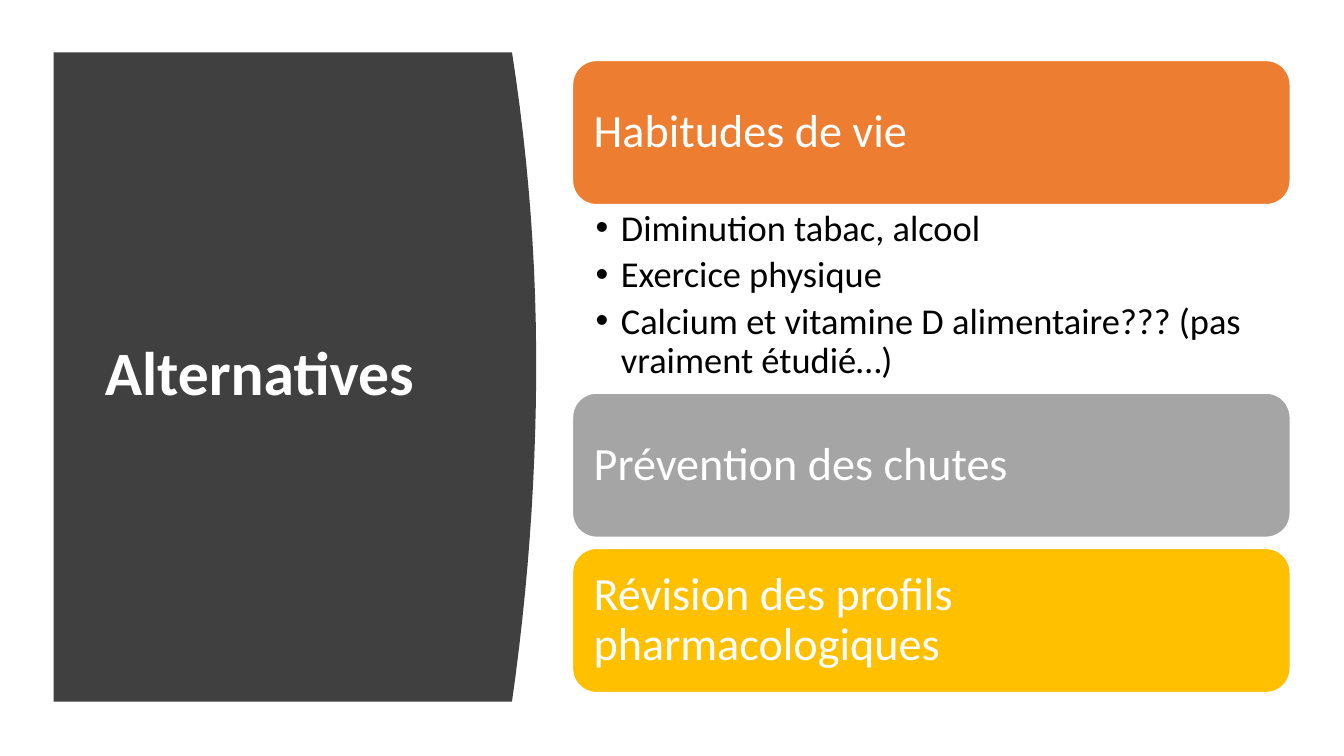
from lxml.etree import SubElement
from pptx import Presentation
from pptx.dml.color import RGBColor
from pptx.enum.shapes import MSO_SHAPE as Shape
from pptx.enum.text import MSO_ANCHOR as Anchor, MSO_AUTO_SIZE as AutoSize, PP_ALIGN as Align
from pptx.oxml.ns import qn
from pptx.util import Inches, Pt

WHITE = RGBColor(0xFF, 0xFF, 0xFF)
BLACK = RGBColor(0x00, 0x00, 0x00)
CHARCOAL = RGBColor(0x40, 0x40, 0x40)
ORANGE = RGBColor(0xED, 0x7D, 0x31)
GREY = RGBColor(0xA5, 0xA5, 0xA5)
GOLD = RGBColor(0xFF, 0xC0, 0x00)

TOPICS = [
    ("Habitudes de vie", ORANGE, [
        "Diminution tabac, alcool",
        "Exercice physique",
        "Calcium et vitamine D alimentaire??? (pas vraiment étudié…)",
    ]),
    ("Prévention des chutes", GREY, []),
    ("Révision des profils pharmacologiques", GOLD, []),
]

# Shares of the slide, in percent of its width or height
STACK_LEFT, STACK_TOP, STACK_WIDTH = 42.6, 8, 53.4
CARD_HEIGHT, DETAILS_HEIGHT, GAP = 19.07, 24.93, 1.47


class SlideBuilder:
    TITLE = {"size": Pt(44), "bold": True, "name": "Calibri"}
    HEADING = {"size": Pt(33), "name": "Calibri"}
    DETAIL = {"size": Pt(26), "name": "Calibri"}

    def __init__(self, deck):
        self.width, self.height = deck.slide_width, deck.slide_height
        self.slide = deck.slides.add_slide(deck.slide_layouts[5])
        self.shapes = self.slide.shapes

    def x(self, percent):
        return round(self.width * percent / 100)

    def y(self, percent):
        return round(self.height * percent / 100)

    def box(self, left, top, width, height):
        return self.x(left), self.y(top), self.x(width), self.y(height)

    def frame(self, shape, anchor, margins):
        """Set wrapping, anchor and margins (left, top, right, bottom in inches)."""
        frame = shape.text_frame
        sides = ("margin_left", "margin_top", "margin_right", "margin_bottom")
        settings = {"word_wrap": True, "auto_size": AutoSize.NONE, "vertical_anchor": anchor}
        settings.update(zip(sides, map(Inches, margins)))
        for name, value in settings.items():
            setattr(frame, name, value)
        return frame

    def set_text(self, paragraph, text, style, color):
        paragraph.text = text
        paragraph.alignment = Align.LEFT
        paragraph.line_spacing = 0.9
        font = paragraph.runs[0].font
        for name, value in style.items():
            setattr(font, name, value)
        font.color.rgb = color

    def title(self, text, *place):
        title = self.shapes.title
        title.left, title.top, title.width, title.height = self.box(*place)
        frame = self.frame(title, Anchor.MIDDLE, (0.1, 0.05, 0.1, 0.05))
        self.set_text(frame.paragraphs[0], text, self.TITLE, WHITE)

    def curved_panel(self, left, top, corner, bulge, apex, bottom, steps=24):
        """Draw a panel behind the title, its right side a parabola widest at apex."""
        def edge(level):
            reach = apex - top if level < apex else bottom - apex
            return bulge - (bulge - corner) * ((level - apex) / reach) ** 2

        levels = [top + (bottom - top) * step / steps for step in range(steps + 1)]
        outline = self.shapes.build_freeform(self.x(left), self.y(top))
        points = [(self.x(edge(level)), self.y(level)) for level in levels]
        outline.add_line_segments(points + [(self.x(left), self.y(bottom))])
        panel = outline.convert_to_shape()
        panel.shadow.inherit = False
        panel.fill.solid()
        panel.fill.fore_color.rgb = CHARCOAL
        panel.line.fill.background()
        self.shapes.title.element.addprevious(panel.element)

    def card(self, text, color, *place):
        card = self.shapes.add_shape(Shape.ROUNDED_RECTANGLE, *self.box(*place))
        card.shadow.inherit = False
        card.fill.solid()
        card.fill.fore_color.rgb = color
        card.line.color.rgb = WHITE
        card.line.width = Pt(1)
        frame = self.frame(card, Anchor.MIDDLE, (0.14,) * 4)
        self.set_text(frame.paragraphs[0], text, self.HEADING, WHITE)

    def bullets(self, items, *place):
        box = self.shapes.add_textbox(*self.box(*place))
        frame = self.frame(box, Anchor.TOP, (0.23, 0.05, 0.26, 0.05))
        for index, item in enumerate(items):
            paragraph = frame.add_paragraph() if index else frame.paragraphs[0]
            self.set_text(paragraph, item, self.DETAIL, BLACK)
            if index:
                paragraph.space_before = Pt(5.2)
            properties = paragraph._p.get_or_add_pPr()
            properties.set("marL", str(Inches(0.25)))
            properties.set("indent", str(Inches(-0.25)))
            SubElement(properties, qn("a:buFont")).set("typeface", "Arial")
            SubElement(properties, qn("a:buChar")).set("char", "•")


def main():
    deck = Presentation()
    deck.slide_width, deck.slide_height = Inches(13.33), Inches(7.5)
    builder = SlideBuilder(deck)
    builder.curved_panel(left=4, top=6.93, corner=38.1, bulge=39.9, apex=48, bottom=92.8)
    builder.title("Alternatives", 7.05, 14.8, 28.05, 69.87)

    top = STACK_TOP
    for heading, color, details in TOPICS:
        builder.card(heading, color, STACK_LEFT, top, STACK_WIDTH, CARD_HEIGHT)
        top += CARD_HEIGHT
        if details:
            builder.bullets(details, STACK_LEFT, top, STACK_WIDTH, DETAILS_HEIGHT)
        top += DETAILS_HEIGHT if details else GAP
    deck.save("out.pptx")


if __name__ == "__main__":
    main()
